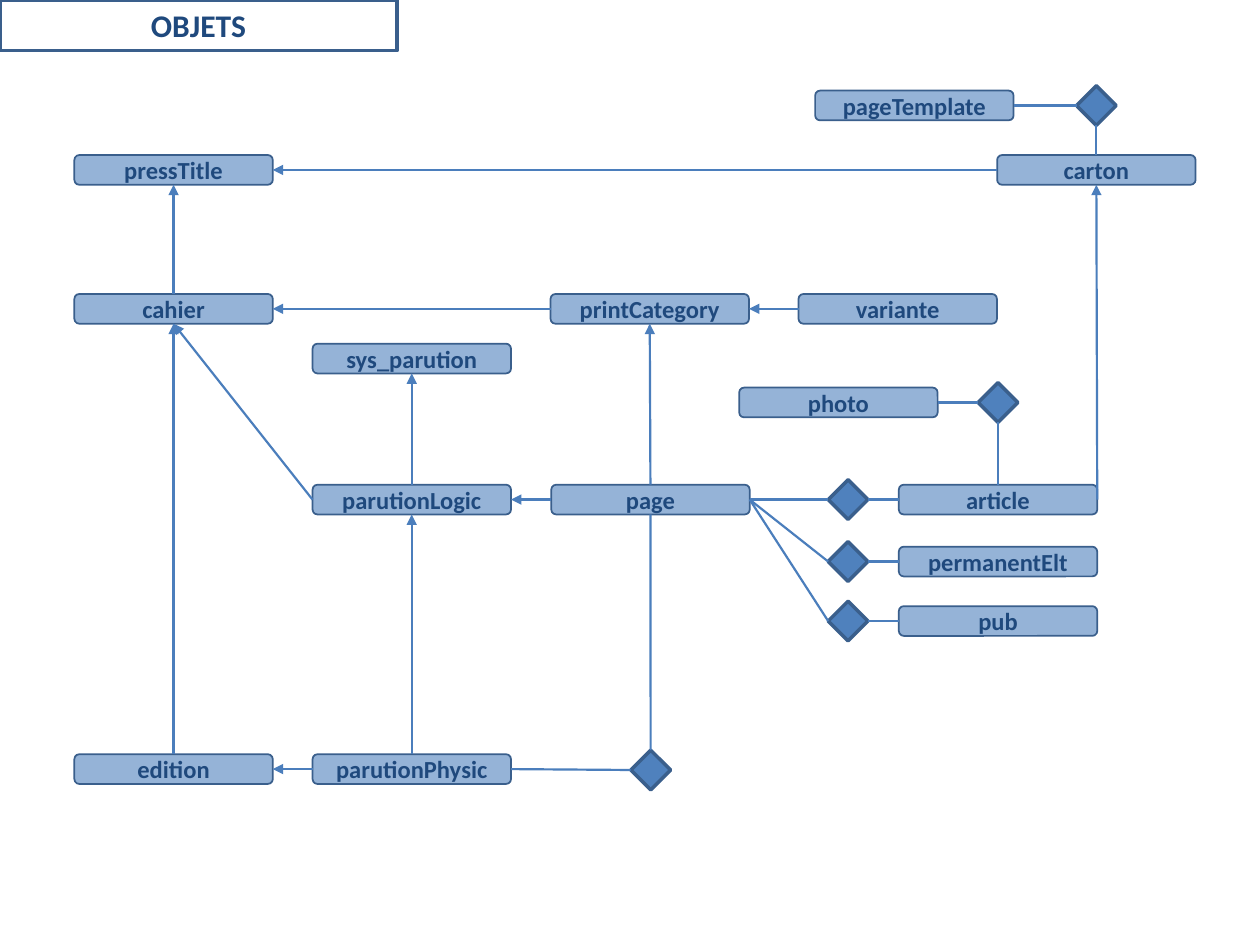
"""Draw the object model of a press system as linked boxes and diamonds."""
from typing import NamedTuple

from lxml import etree
from pptx import Presentation
from pptx.dml.color import RGBColor
from pptx.enum.shapes import MSO_CONNECTOR, MSO_SHAPE
from pptx.enum.text import MSO_ANCHOR, PP_ALIGN
from pptx.oxml.ns import qn
from pptx.shapes.autoshape import Shape
from pptx.slide import Slide
from pptx.util import Pt

ROUND = MSO_SHAPE.ROUNDED_RECTANGLE
RECT = MSO_SHAPE.RECTANGLE
DIAMOND = MSO_SHAPE.DIAMOND
STRAIGHT = MSO_CONNECTOR.STRAIGHT
MIDDLE = MSO_ANCHOR.MIDDLE
CENTER = PP_ALIGN.CENTER

PALE = RGBColor(0x95, 0xB3, 0xD7)
BLUE = RGBColor(0x4F, 0x81, 0xBD)
EDGE = RGBColor(0x3A, 0x5F, 0x8C)
WIRE = RGBColor(0x4B, 0x7E, 0xBC)
NAVY = RGBColor(0x1F, 0x49, 0x7D)

FONT = "Calibri"
WIDE, HIGH, GEM = 113.4, 17, 22.7
TOP, LEFT, BOTTOM, RIGHT = range(4)
COL1, COL2, COL3, COL4 = 42.5, 178.6, 315, 513.6
ROW1, ROW2, ROW3, ROW4 = 88.6, 168, 277, 431


class Box(NamedTuple):
    """A named object and its top left corner."""
    name: str
    left: float
    top: float


class Gem(NamedTuple):
    """A link diamond and its centre."""
    name: str
    x: float
    y: float


class Link(NamedTuple):
    """A line from one side of a shape to a side of another."""
    start: str
    out: int
    end: str
    into: int
    arrow: bool = True


BOXES = [
    Box("pressTitle", COL1, ROW1),
    Box("cahier", COL1, ROW2),
    Box("edition", COL1, ROW4),
    Box("sys_parution", COL2, 196.4),
    Box("parutionLogic", COL2, ROW3),
    Box("parutionPhysic", COL2, ROW4),
    Box("page", COL3, ROW3),
    Box("printCategory", 314.6, ROW2),
    Box("variante", 456.3, ROW2),
    Box("pub", COL4, 346.4),
    Box("permanentElt", COL4, 312.4),
    Box("article", COL4, ROW3),
    Box("photo", 422.4, 221.5),
    Box("carton", 569.8, ROW1),
    Box("pageTemplate", 465.8, 51.8),
]

GEMS = [
    Gem("page gem", 371.8, 440),
    Gem("pub gem", 484.6, 354.9),
    Gem("permanent gem", 484.6, 320.9),
    Gem("article gem", 484.6, 285.5),
    Gem("photo gem", 570.3, 230),
    Gem("carton gem", 626.5, 60.3),
]

LINKS = [
    Link("cahier", TOP, "pressTitle", BOTTOM),
    Link("edition", TOP, "cahier", BOTTOM),
    Link("parutionPhysic", LEFT, "edition", RIGHT),
    Link("parutionPhysic", TOP, "parutionLogic", BOTTOM),
    Link("parutionLogic", TOP, "sys_parution", BOTTOM),
    Link("parutionLogic", LEFT, "cahier", BOTTOM),
    Link("printCategory", LEFT, "cahier", RIGHT),
    Link("variante", LEFT, "printCategory", RIGHT),
    Link("page", LEFT, "parutionLogic", RIGHT),
    Link("page", TOP, "printCategory", BOTTOM),
    Link("page", BOTTOM, "page gem", TOP, False),
    Link("parutionPhysic", RIGHT, "page gem", LEFT, False),
    Link("page", RIGHT, "article gem", LEFT, False),
    Link("article gem", RIGHT, "article", LEFT, False),
    Link("pub gem", RIGHT, "pub", LEFT, False),
    Link("permanent gem", RIGHT, "permanentElt", LEFT, False),
    Link("page", RIGHT, "permanent gem", LEFT, False),
    Link("page", RIGHT, "pub gem", LEFT, False),
    Link("photo gem", BOTTOM, "article", TOP, False),
    Link("photo", RIGHT, "photo gem", LEFT, False),
    Link("article", RIGHT, "carton", BOTTOM),
    Link("carton", LEFT, "pressTitle", RIGHT),
    Link("pageTemplate", RIGHT, "carton gem", LEFT, False),
    Link("carton gem", BOTTOM, "carton", TOP, False),
]


def add_form(slide: Slide, kind: MSO_SHAPE, left: float, top: float,
             width: float, height: float, edge: float,
             fill: RGBColor | None) -> Shape:
    """Add an outlined shape, filled when a colour is given."""
    form = slide.shapes.add_shape(kind, Pt(left), Pt(top), Pt(width), Pt(height))
    form.shadow.inherit = False
    if fill is None:
        form.fill.background()
    else:
        form.fill.solid()
        form.fill.fore_color.rgb = fill
    form.line.color.rgb = EDGE
    form.line.width = Pt(edge)
    return form


def add_label(form: Shape, text: str, size: float) -> None:
    """Write bold centred text in a shape."""
    frame = form.text_frame
    frame.vertical_anchor = MIDDLE
    para = frame.paragraphs[0]
    para.alignment = CENTER
    run = para.add_run()
    run.text = text
    run.font.name = FONT
    run.font.size = Pt(size)
    run.font.bold = True
    run.font.color.rgb = NAVY


def add_link(slide: Slide, link: Link, forms: dict[str, Shape]) -> None:
    """Join two shapes with a line, with an arrowhead if asked."""
    wire = slide.shapes.add_connector(STRAIGHT, Pt(0), Pt(0), Pt(0), Pt(0))
    wire.begin_connect(forms[link.start], link.out)
    wire.end_connect(forms[link.end], link.into)
    wire.line.color.rgb = WIRE
    wire.line.width = Pt(1.25)
    props = wire.element.spPr
    if link.arrow:
        etree.SubElement(props.find(qn("a:ln")), qn("a:tailEnd"), type="triangle")
    etree.SubElement(props, qn("a:effectLst"))


def main() -> None:
    """Build and save the slide."""
    deck = Presentation()
    deck.slide_width, deck.slide_height = Pt(720), Pt(540)
    slide = deck.slides.add_slide(deck.slide_layouts[6])
    forms: dict[str, Shape] = {}
    for box in BOXES:
        form = add_form(slide, ROUND, box.left, box.top, WIDE, HIGH, 1, PALE)
        add_label(form, box.name, 14)
        forms[box.name] = form
    for gem in GEMS:
        forms[gem.name] = add_form(slide, DIAMOND, gem.x - GEM / 2,
                                   gem.y - GEM / 2, GEM, GEM, 2, BLUE)
    for link in LINKS:
        add_link(slide, link, forms)
    title = add_form(slide, RECT, 0, 0, 226.8, 29, 2, None)
    add_label(title, "OBJETS", 18)
    deck.save("out.pptx")


if __name__ == "__main__":
    main()
